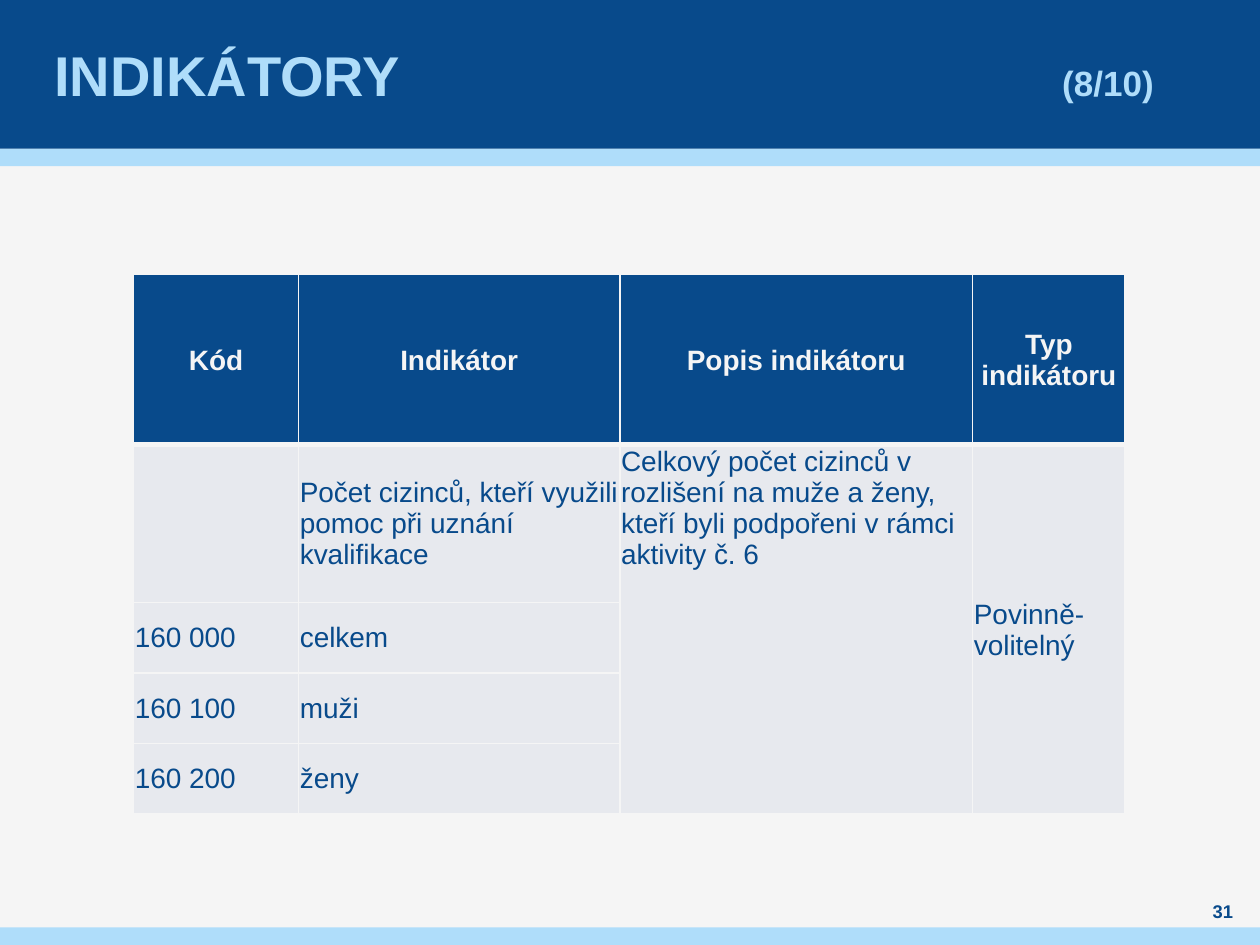
from lxml.etree import SubElement
from pptx import Presentation
from pptx.dml.color import RGBColor
from pptx.enum.shapes import MSO_SHAPE as Shape
from pptx.enum.text import MSO_ANCHOR as Anchor, MSO_AUTO_SIZE as AutoSize, PP_ALIGN as Align
from pptx.oxml.ns import qn
from pptx.util import Inches, Pt

NAVY = RGBColor(0x08, 0x4A, 0x8B)
SKY = RGBColor(0xAF, 0xDD, 0xFA)
PAPER = RGBColor(0xF5, 0xF5, 0xF5)
CELL_GREY = RGBColor(0xE7, 0xE9, 0xEE)

COLUMN_WIDTHS = (1.31, 2.55, 2.8, 1.21)
ROW_HEIGHTS = (1.35, 1.25, 0.56, 0.56, 0.56)
ROWS = (
    ("Kód", "Indikátor", "Popis indikátoru", "Typ indikátoru"),
    ("", "Počet cizinců, kteří využili pomoc při uznání kvalifikace",
     "Celkový počet cizinců v rozlišení na muže a ženy, kteří byli podpořeni v rámci aktivity č. 6",
     "Povinně-volitelný"),
    ("160 000", "celkem"),
    ("160 100", "muži"),
    ("160 200", "ženy"),
)
DESCRIPTION_COLUMN, TYPE_COLUMN = 2, 3


def write(paragraph, text, size=16, color=NAVY, bold=False, align=Align.LEFT):
    paragraph.alignment = align
    run = paragraph.add_run()
    run.text = text
    run.font.name = "Arial"
    run.font.size = Pt(size)
    run.font.bold = bold
    run.font.color.rgb = color


def set_margins(frame, left, top, right, bottom):
    frame.margin_left, frame.margin_top = Inches(left), Inches(top)
    frame.margin_right, frame.margin_bottom = Inches(right), Inches(bottom)


def add_band(slide, top, height, color):
    band = slide.shapes.add_shape(Shape.RECTANGLE, 0, Inches(top), Inches(10), Inches(height))
    band.shadow.inherit = False
    band.fill.solid()
    band.fill.fore_color.rgb = color
    band.line.fill.background()


def place_title(slide, left, top, width, height):
    title = slide.shapes.title
    title.left, title.top = Inches(left), Inches(top)
    title.width, title.height = Inches(width), Inches(height)
    slide.shapes._spTree.append(title._element)
    frame = title.text_frame
    frame.auto_size = AutoSize.NONE
    frame.word_wrap = True
    frame.vertical_anchor = Anchor.MIDDLE
    set_margins(frame, 0.04, 0, 0.04, 0)
    heading = frame.paragraphs[0]
    write(heading, "INDIKÁTORY\t", size=32, color=SKY, bold=True)
    write(heading, "(8/10)", size=20, color=SKY, bold=True)
    tab_stops = SubElement(heading._p.get_or_add_pPr(), qn("a:tabLst"))
    SubElement(tab_stops, qn("a:tab"), pos=str(Inches(8)), algn="l")


def add_borders(cell, top, bottom):
    properties = cell._tc.get_or_add_tcPr()
    for side, width in (("L", 1), ("R", 1), ("T", top), ("B", bottom)):
        border = SubElement(properties, qn(f"a:ln{side}"), w=str(Pt(width)))
        fill = SubElement(border, qn("a:solidFill"))
        SubElement(fill, qn("a:srgbClr"), val=str(PAPER))


def add_indicator_table(slide, left, top, width, height):
    table = slide.shapes.add_table(len(ROW_HEIGHTS), len(COLUMN_WIDTHS), Inches(left),
                                   Inches(top), Inches(width), Inches(height)).table
    for column, column_width in zip(table.columns, COLUMN_WIDTHS):
        column.width = Inches(column_width)
    for row, row_height in zip(table.rows, ROW_HEIGHTS):
        row.height = Inches(row_height)

    for r, row in enumerate(table.rows):
        for cell in row.cells:
            add_borders(cell, top=3 if r == 1 else 1, bottom=3 if r == 0 else 1)
            cell.fill.solid()
            cell.fill.fore_color.rgb = NAVY if r == 0 else CELL_GREY
            cell.vertical_anchor = Anchor.MIDDLE
            set_margins(cell, 0.01, 0.01, 0.01, 0)

    for column in (DESCRIPTION_COLUMN, TYPE_COLUMN):
        table.cell(1, column).merge(table.cell(len(ROWS) - 1, column))
    table.cell(1, DESCRIPTION_COLUMN).vertical_anchor = Anchor.TOP

    for r, texts in enumerate(ROWS):
        for c, text in enumerate(texts):
            if not text:
                continue
            paragraph = table.cell(r, c).text_frame.paragraphs[0]
            if r == 0:
                write(paragraph, text, color=PAPER, bold=True, align=Align.CENTER)
            else:
                write(paragraph, text, align=Align.JUSTIFY if c == TYPE_COLUMN else Align.LEFT)


def add_page_number(slide, left, top, width, height):
    frame = slide.shapes.add_textbox(Inches(left), Inches(top),
                                     Inches(width), Inches(height)).text_frame
    frame.word_wrap = True
    frame.vertical_anchor = Anchor.MIDDLE
    set_margins(frame, 0, 0, 0, 0)
    write(frame.paragraphs[0], "31", size=10.5, bold=True, align=Align.CENTER)


def main():
    deck = Presentation()
    deck.slide_width, deck.slide_height = Inches(10), Inches(7.5)
    slide = deck.slides.add_slide(deck.slide_layouts.get_by_name("Title Only"))
    slide.background.fill.solid()
    slide.background.fill.fore_color.rgb = PAPER
    add_band(slide, 1.18, 0.14, SKY)
    add_band(slide, 0, 1.18, NAVY)
    add_band(slide, 7.36, 0.14, SKY)
    place_title(slide, 0.39, 0, 9.21, 1.18)
    add_indicator_table(slide, 1.06, 2.18, sum(COLUMN_WIDTHS), sum(ROW_HEIGHTS))
    add_page_number(slide, 9.45, 7.13, 0.51, 0.2)
    deck.save("out.pptx")


if __name__ == "__main__":
    main()
